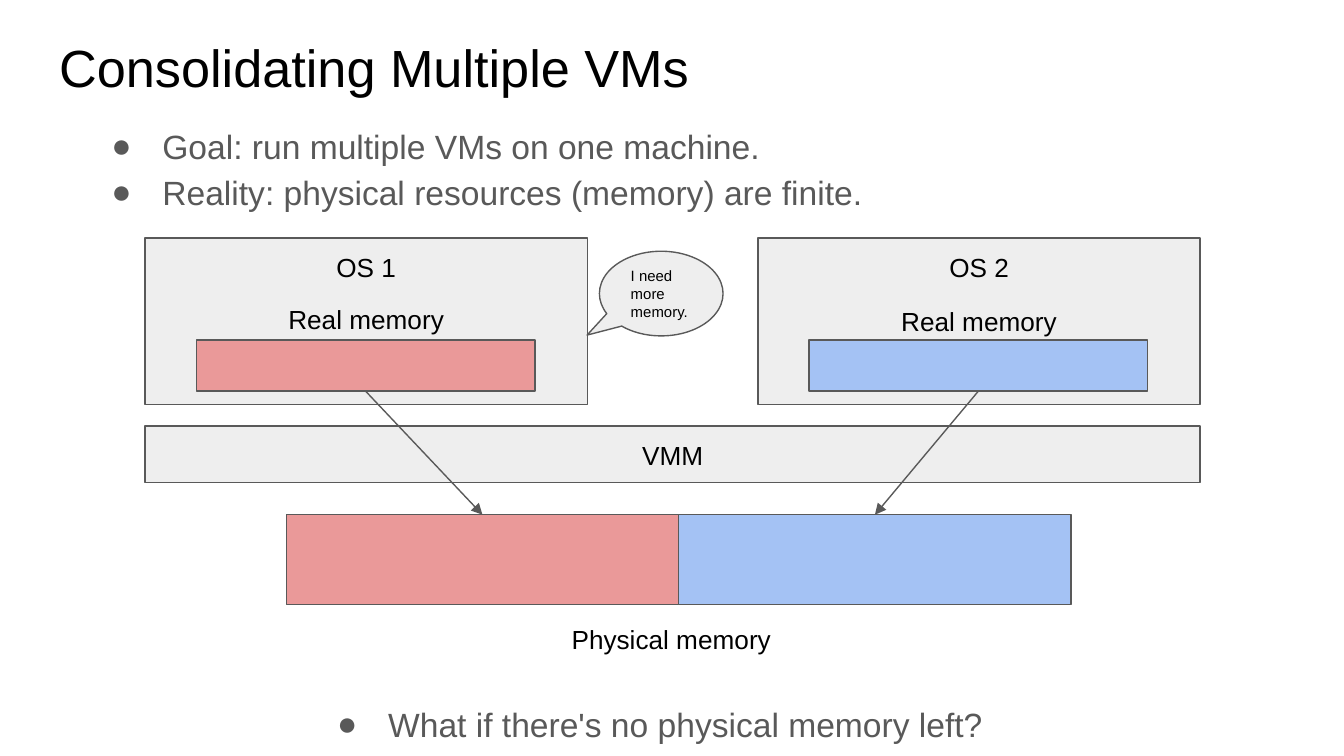
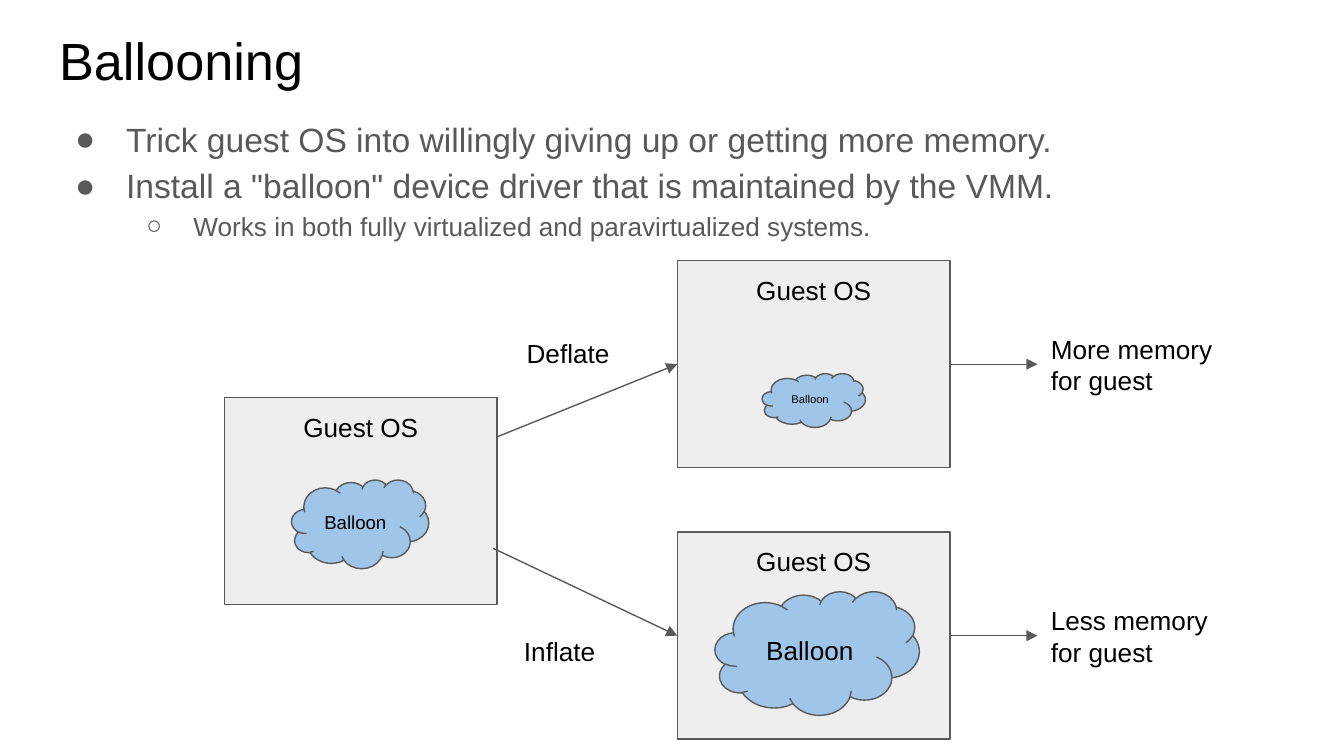
import pptx
import pptx.util
import pptx.dml.color
import pptx.enum.shapes
import pptx.enum.text
import pptx.oxml.ns
from lxml import etree

PX = 9144
FONT = "Arial"
BLACK, GRAY, PANEL = "000000", "595959", "EEEEEE"
RED, BLUE, SKY = "EA9999", "A4C2F4", "9FC5E8"
SHAPES = pptx.enum.shapes.MSO_SHAPE
ANCHOR = pptx.enum.text.MSO_ANCHOR
ALIGN = pptx.enum.text.PP_ALIGN
TOP, LEFT, BOTTOM, RIGHT = range(4)
LEVELS = [("●", 50, -38, 18), ("○", 100, -35, 14)]

VM_TITLE = "Consolidating Multiple VMs"
VM_POINTS = [(0, "Goal: run multiple VMs on one machine."),
             (0, "Reality: physical resources (memory) are finite.")]
VM_QUESTION = [(0, "What if there's no physical memory left?")]
SYSTEMS = [("OS 1", 108, 216, RED), ("OS 2", 564, 217, BLUE)]

BALLOON_TITLE = "Ballooning"
BALLOON_POINTS = [
    (0, "Trick guest OS into willingly giving up or getting more memory."),
    (0, 'Install a "balloon" device driver that is maintained by the VMM.'),
    (1, "Works in both fully virtualized and paravirtualized systems."),
]
GUEST = (167, 296, (217, 357, 102, 66), 10)
OUTCOMES = [
    {"guest": (504, 194, (567, 278, 77, 40), 6), "start": (370, 325),
     "action": ("Deflate", (382, 241, 84, 40)), "result": "More memory for guest"},
    {"guest": (504, 396, (532, 440, 152, 92), 14), "start": (367, 408),
     "action": ("Inflate", (380, 463, 89, 46)), "result": "Less memory for guest"},
]


def emu(*lengths):
    return [pptx.util.Emu(n * PX) for n in lengths]


def rgb(color):
    return pptx.dml.color.RGBColor.from_string(color)


def sub(parent, tag, **attrs):
    return etree.SubElement(parent, pptx.oxml.ns.qn(tag), attrs)


def style(p, size, color=BLACK, align=ALIGN.LEFT):
    p.alignment = align
    p.font.name = FONT
    p.font.size = pptx.util.Pt(size)
    p.font.color.rgb = rgb(color)


def frame(sp, anchor=ANCHOR.TOP):
    tf = sp.text_frame
    tf.word_wrap = True
    tf.auto_size = pptx.enum.text.MSO_AUTO_SIZE.NONE
    tf.vertical_anchor = anchor
    tf.margin_left, tf.margin_top, tf.margin_right, tf.margin_bottom = emu(10, 10, 10, 10)
    return tf


def write(sp, text, size, align=ALIGN.LEFT, anchor=ANCHOR.TOP):
    p = frame(sp, anchor).paragraphs[0]
    p.text = text
    style(p, size, align=align)


def add_slide(prs, title, top):
    slide = prs.slides.add_slide(prs.slide_layouts[5])
    sp = slide.shapes.title
    sp.left, sp.top, sp.width, sp.height = emu(34, top, 932, 63)
    write(sp, title, 28)
    return slide.shapes


def add_label(shapes, text, box, align=ALIGN.LEFT):
    write(shapes.add_textbox(*emu(*box)), text, 14, align)


def add_bullets(shapes, points, box):
    tf = frame(shapes.add_textbox(*emu(*box)))
    for i, (level, text) in enumerate(points):
        p = tf.add_paragraph() if i else tf.paragraphs[0]
        char, margin, indent, size = LEVELS[level]
        p.text = text
        p.level = level
        p.line_spacing = 1.15
        pPr = p._p.get_or_add_pPr()
        pPr.set("marL", str(margin * PX))
        pPr.set("indent", str(indent * PX))
        sub(sub(pPr, "a:buClr"), "a:srgbClr", val=GRAY)
        sub(pPr, "a:buFont", typeface=FONT)
        sub(pPr, "a:buChar", char=char)
        style(p, size, GRAY)


def add_box(shapes, box, fill, text="", size=14, kind=SHAPES.RECTANGLE,
            align=ALIGN.CENTER, anchor=ANCHOR.TOP):
    sp = shapes.add_shape(kind, *emu(*box))
    sp.shadow.inherit = False
    sp.fill.solid()
    sp.fill.fore_color.rgb = rgb(fill)
    sp.line.color.rgb = rgb(GRAY)
    sp.line.width = pptx.util.Pt(0.75)
    if text:
        write(sp, text, size, align, anchor)
    return sp


def add_arrow(shapes, start, end):
    cxn = shapes.add_connector(pptx.enum.shapes.MSO_CONNECTOR.STRAIGHT, 0, 0, 0, 0)
    if isinstance(start[0], int):
        cxn.begin_x, cxn.begin_y = emu(*start)
    else:
        cxn.begin_connect(*start)
    if isinstance(end[0], int):
        cxn.end_x, cxn.end_y = emu(*end)
    else:
        cxn.end_connect(*end)
    cxn.line.color.rgb = rgb(GRAY)
    cxn.line.width = pptx.util.Pt(0.75)
    sub(cxn.get_or_add_ln(), "a:tailEnd", type="triangle")
    sub(cxn._element.spPr, "a:effectLst")


def add_guest(shapes, left, top, cloud, size):
    sp = add_box(shapes, (left, top, 203, 154), PANEL, "Guest OS")
    add_box(shapes, cloud, SKY, "Balloon", size, SHAPES.CLOUD, anchor=ANCHOR.MIDDLE)
    return sp


def build_consolidation(prs):
    shapes = add_slide(prs, VM_TITLE, 16)
    add_bullets(shapes, VM_QUESTION, (229, 509, 526, 86))
    add_box(shapes, (108, 317, 785, 42), PANEL, "VMM")
    for i, (name, left, label_top, color) in enumerate(SYSTEMS):
        add_box(shapes, (left, 177, 329, 124), PANEL, name)
        real = add_box(shapes, (left + 38, 253, 252, 38), color)
        physical = add_box(shapes, (213 + 292 * i, 383, 292, 67), color)
        add_label(shapes, "Real memory", (left + 58, label_top, 213, 42), ALIGN.CENTER)
        add_arrow(shapes, (real, BOTTOM), (physical, TOP))
    add_label(shapes, "Physical memory", (407, 454, 185, 42), ALIGN.CENTER)
    callout = add_box(shapes, (446, 187, 92, 63), PANEL, "I need more memory.", 8,
                      SHAPES.OVAL_CALLOUT, ALIGN.LEFT, ANCHOR.MIDDLE)
    callout.adjustments[0] = -0.6
    callout.adjustments[1] = 0.49
    add_bullets(shapes, VM_POINTS, (61, 79, 735, 86))


def build_ballooning(prs):
    shapes = add_slide(prs, BALLOON_TITLE, 11)
    add_bullets(shapes, BALLOON_POINTS, (34, 74, 932, 114))
    add_guest(shapes, *GUEST)
    for outcome in OUTCOMES:
        guest = add_guest(shapes, *outcome["guest"])
        middle = outcome["guest"][1] + 77
        add_arrow(shapes, outcome["start"], (guest, LEFT))
        add_arrow(shapes, (guest, RIGHT), (772, middle))
        add_label(shapes, *outcome["action"])
        add_label(shapes, outcome["result"], (772, middle - 33, 141, 66))


def main():
    prs = pptx.Presentation()
    prs.slide_width = pptx.util.Emu(1000 * PX)
    prs.slide_height = pptx.util.Emu(prs.slide_width * 9 // 16)
    build_consolidation(prs)
    build_ballooning(prs)
    prs.save("out.pptx")


if __name__ == "__main__":
    main()
